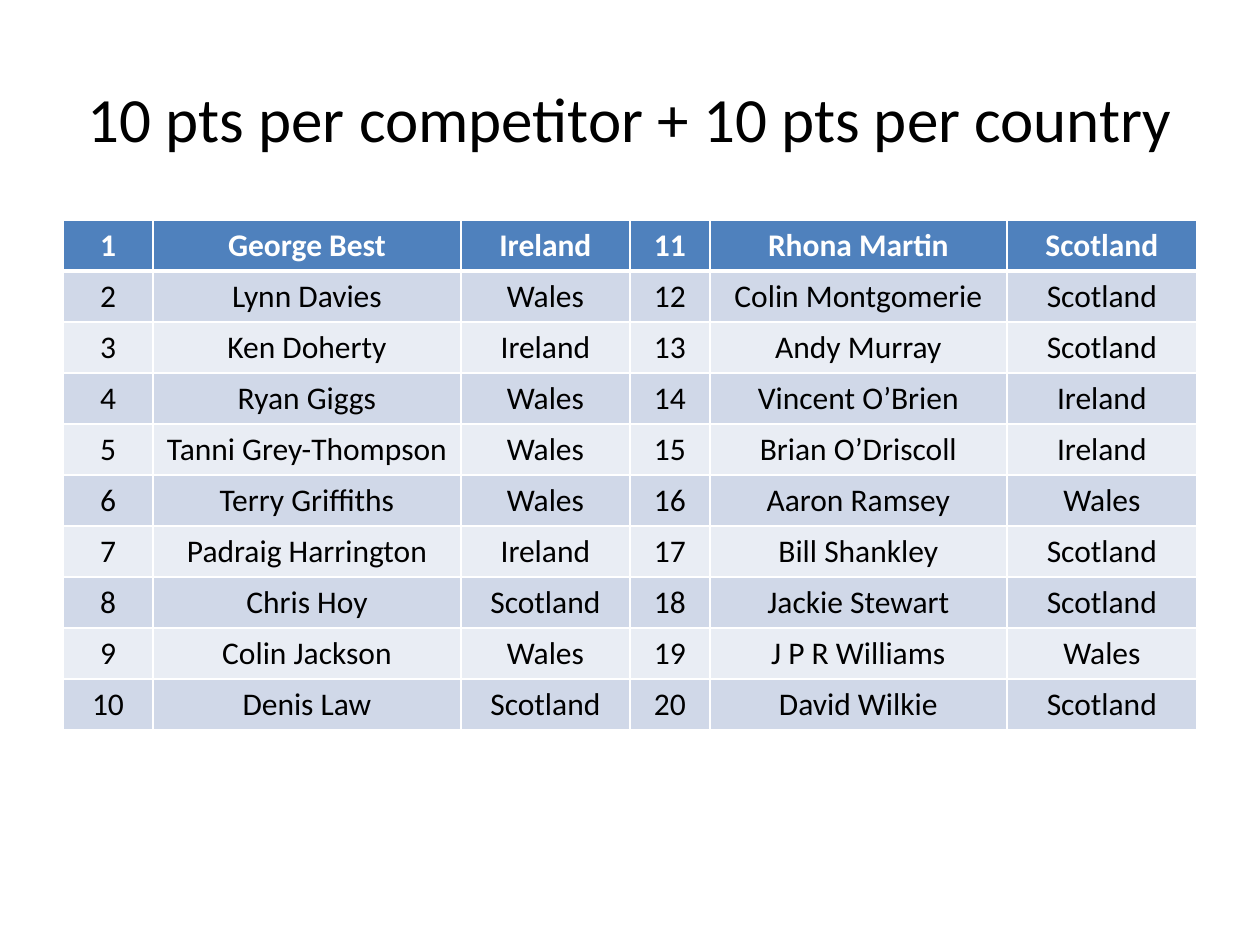
from typing import NamedTuple

from lxml.etree import SubElement
from pptx import Presentation
from pptx.dml.color import RGBColor
from pptx.enum.text import MSO_ANCHOR as Anchor, PP_ALIGN as Align
from pptx.oxml.ns import qn
from pptx.util import Emu, Pt

FONT = "Calibri"
WHITE, BLACK, BLUE = "FFFFFF", "000000", "4F81BD"
BANDS = ["E9EDF4", "D0D8E8"]
WIDTHS = [90, 308, 169, 80, 297, 190]
ROW = 51


class Star(NamedTuple):
    name: str
    land: str


STARS = [
    Star("George Best", "Ireland"),
    Star("Lynn Davies", "Wales"),
    Star("Ken Doherty", "Ireland"),
    Star("Ryan Giggs", "Wales"),
    Star("Tanni Grey-Thompson", "Wales"),
    Star("Terry Griffiths", "Wales"),
    Star("Padraig Harrington", "Ireland"),
    Star("Chris Hoy", "Scotland"),
    Star("Colin Jackson", "Wales"),
    Star("Denis Law", "Scotland"),
    Star("Rhona Martin", "Scotland"),
    Star("Colin Montgomerie", "Scotland"),
    Star("Andy Murray", "Scotland"),
    Star("Vincent O’Brien", "Ireland"),
    Star("Brian O’Driscoll", "Ireland"),
    Star("Aaron Ramsey", "Wales"),
    Star("Bill Shankley", "Scotland"),
    Star("Jackie Stewart", "Scotland"),
    Star("J P R Williams", "Wales"),
    Star("David Wilkie", "Scotland"),
]
HALF = len(STARS) // 2


def px(n: int) -> Emu:
    return Emu(round(n * 914400 / 126))


def color(code: str) -> RGBColor:
    return RGBColor.from_string(code)


def write(frame, text: str, size: int, ink: str, bold: bool = False) -> None:
    para = frame.paragraphs[0]
    para.text = text
    para.alignment = Align.CENTER
    font = para.font
    font.name, font.size, font.bold = FONT, Pt(size), bold
    font.color.rgb = color(ink)


def edge(cell, side: str, width: int) -> None:
    line = SubElement(cell._tc.get_or_add_tcPr(), qn(f"a:{side}"), w=str(Pt(width)))
    fill = SubElement(line, qn("a:solidFill"))
    SubElement(fill, qn("a:srgbClr"), val=WHITE)


def paint(cell, text: str, row: int) -> None:
    head = row == 0
    write(cell.text_frame, text, 18, WHITE if head else BLACK, head)
    # Borders come before the fill in the cell properties
    for side in ("lnL", "lnR", "lnT", "lnB"):
        thick = (head and side == "lnB") or (row == 1 and side == "lnT")
        edge(cell, side, 3 if thick else 1)
    cell.fill.solid()
    cell.fill.fore_color.rgb = color(BLUE if head else BANDS[row % 2])


def entry(num: int) -> list[str]:
    return [str(num + 1), *STARS[num]]


def main() -> None:
    prs = Presentation()
    prs.slide_width, prs.slide_height = px(1260), px(945)
    slide = prs.slides.add_slide(prs.slide_layouts[6])

    # Title
    box = slide.shapes.add_textbox(px(63), px(38), px(1134), px(158))
    frame = box.text_frame
    frame.word_wrap = True
    frame.vertical_anchor = Anchor.MIDDLE
    write(frame, "10 pts per competitor + 10 pts per country", 36, BLACK)

    # Two halves of the list, side by side
    table = slide.shapes.add_table(
        HALF, len(WIDTHS), px(63), px(220), px(sum(WIDTHS)), px(HALF * ROW)
    ).table
    for col, width in zip(table.columns, WIDTHS):
        col.width = px(width)
    for row in range(HALF):
        table.rows[row].height = px(ROW)
        for col, text in enumerate(entry(row) + entry(row + HALF)):
            paint(table.cell(row, col), text, row)

    prs.save("out.pptx")


if __name__ == "__main__":
    main()
